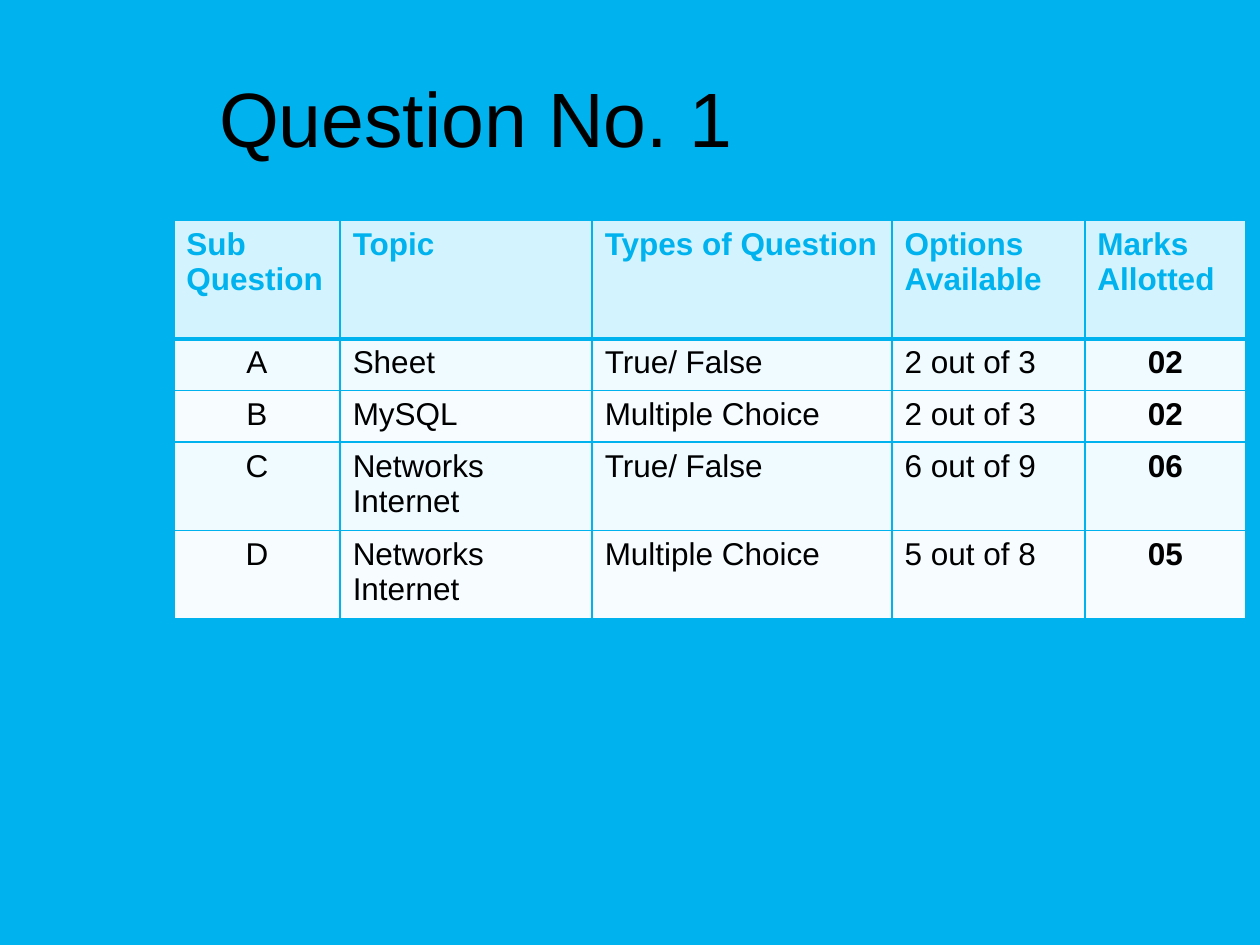
import pptx
import pptx.util
import pptx.dml.color
import pptx.enum.text
import pptx.oxml
import pptx.oxml.ns

Inches = pptx.util.Inches
Pt = pptx.util.Pt
ALIGN = pptx.enum.text.PP_ALIGN

COLORS = {
    "sky": "00B2EE",
    "head": "D3F4FF",
    "odd": "EFFBFF",
    "even": "F7FDFF",
    "ink": "000000",
}
WIDTHS = [1.32, 2, 2.38, 1.53, 1.28]
HEIGHTS = [0.94, 0.41, 0.41, 0.66, 0.66]
ROWS = [
    ["Sub Question", "Topic", "Types of Question", "Options Available", "Marks Allotted"],
    ["A", "Sheet", "True/ False", "2 out of 3", "02"],
    ["B", "MySQL", "Multiple Choice", "2 out of 3", "02"],
    ["C", "Networks\nInternet", "True/ False", "6 out of 9", "06"],
    ["D", "Networks\nInternet", "Multiple Choice", "5 out of 8", "05"],
]


class Deck:
    """Holds the style and the current slide."""

    font = "Arial"

    def __init__(self, wide, high):
        self.file = pptx.Presentation()
        self.file.slide_width = Inches(wide)
        self.file.slide_height = Inches(high)
        self.slide = self.file.slides.add_slide(self.file.slide_layouts[6])
        self.paint(self.slide.background.fill, "sky")

    def paint(self, fill, color):
        fill.solid()
        fill.fore_color.rgb = pptx.dml.color.RGBColor.from_string(COLORS[color])

    def label(self, frame, text, size, color="ink", bold=False, align=ALIGN.LEFT):
        frame.text = text
        for para in frame.paragraphs:
            para.alignment = align
            for run in para.runs:
                run.font.name = self.font
                run.font.size = Pt(size)
                run.font.bold = bold
                self.paint(run.font.fill, color)

    def title(self, text, left, top, wide, high):
        box = self.slide.shapes.add_textbox(
            Inches(left), Inches(top), Inches(wide), Inches(high))
        frame = box.text_frame
        frame.word_wrap = True
        frame.vertical_anchor = pptx.enum.text.MSO_ANCHOR.MIDDLE
        self.label(frame, text, 44)

    def edge(self, cell, side, width):
        """Draw one cell border; call before the cell is filled."""
        line = pptx.oxml.parse_xml(
            f'<a:ln{side} {pptx.oxml.ns.nsdecls("a")} w="{Pt(width)}">'
            f'<a:solidFill><a:srgbClr val="{COLORS["sky"]}"/></a:solidFill>'
            f'</a:ln{side}>')
        cell._tc.get_or_add_tcPr().append(line)

    def table(self, rows, left, top, widths, heights):
        grid = self.slide.shapes.add_table(
            len(rows), len(widths), Inches(left), Inches(top),
            Inches(sum(widths)), Inches(sum(heights))).table
        for col, wide in zip(grid.columns, widths):
            col.width = Inches(wide)
        for row, high in zip(grid.rows, heights):
            row.height = Inches(high)
        last = len(widths) - 1
        for r, texts in enumerate(rows):
            head = r == 0
            fill = "head" if head else "odd" if r % 2 else "even"
            thick = {"T": 3 if r == 1 else 1, "B": 3 if head else 1}
            for c, text in enumerate(texts):
                cell = grid.cell(r, c)
                for side in "LRTB":
                    self.edge(cell, side, thick.get(side, 1))
                self.paint(cell.fill, fill)
                mid = not head and c in (0, last)
                self.label(cell.text_frame, text, 18,
                           color="sky" if head else "ink",
                           bold=head or c == last,
                           align=ALIGN.CENTER if mid else ALIGN.LEFT)


def main():
    deck = Deck(10, 7.5)
    deck.title("Question No. 1", 1.64, 0.3, 8.26, 1.25)
    deck.table(ROWS, 1.38, 1.75, WIDTHS, HEIGHTS)
    deck.file.save("out.pptx")


if __name__ == "__main__":
    main()
